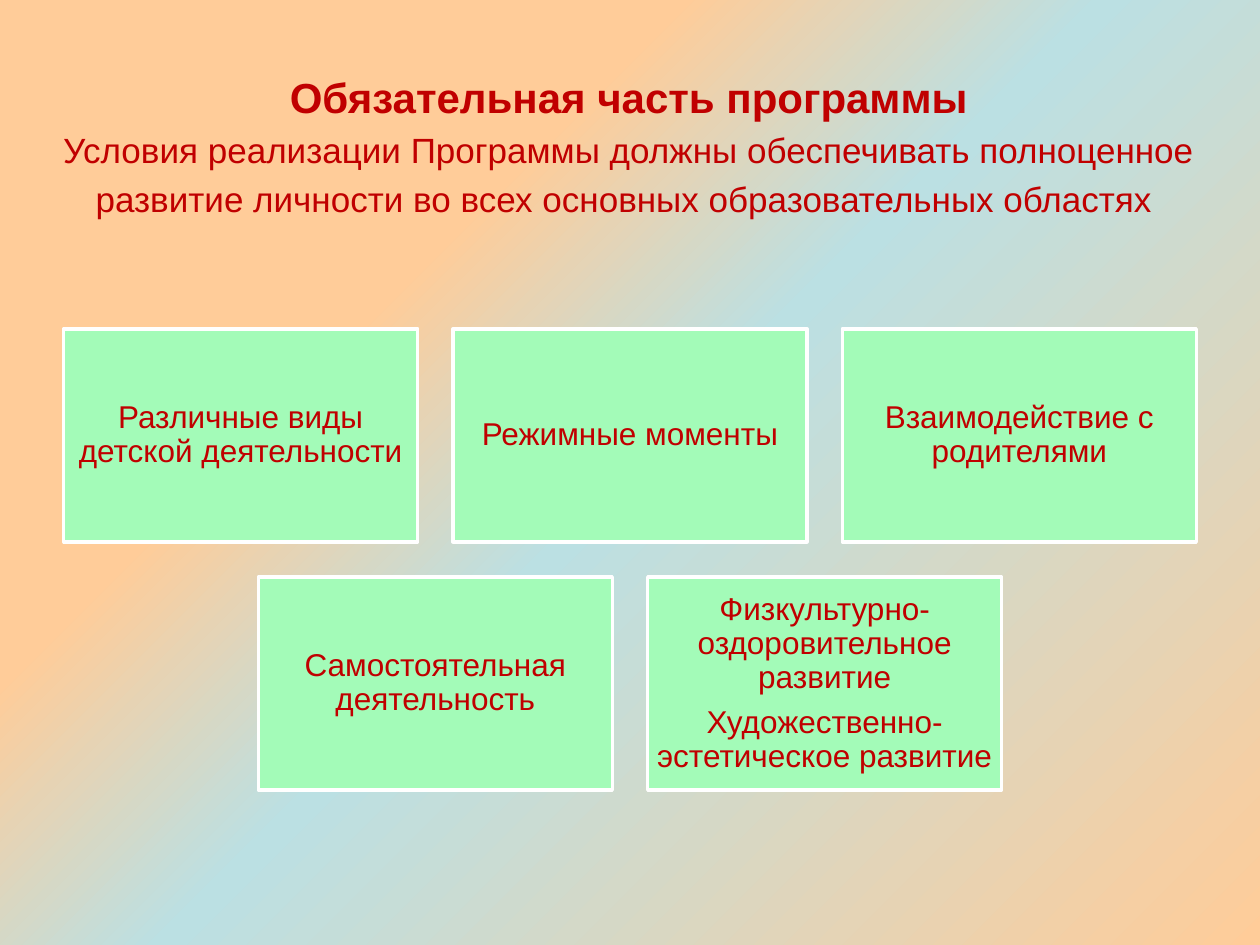
from copy import deepcopy
from dataclasses import dataclass

from pptx import Presentation
from pptx.dml.color import RGBColor
from pptx.enum import shapes, text
from pptx.util import Inches, Pt

COLORS = {"peach": "FFCC99", "sky": "BBE0E3", "mint": "A3FBB8",
          "white": "FFFFFF", "red": "C00000"}
SLIDE_W, SLIDE_H = 10, 7.5
CARD_W, CARD_H, GAP, GRID_TOP = 2.81, 1.69, 0.28, 2.61


@dataclass
class Card:
    paragraphs: list[str]


ROWS = [
    [Card(["Различные виды детской деятельности"]),
     Card(["Режимные моменты"]),
     Card(["Взаимодействие с родителями"])],
    [Card(["Самостоятельная деятельность"]),
     Card(["Физкультурно-оздоровительное развитие",
           "Художественно-эстетическое развитие"])],
]


def rgb(name: str) -> RGBColor:
    return RGBColor.from_string(COLORS[name])


def add_text(p, content: str, size: float, bold: bool = False,
             color: str = "red", spacing: float = 1.0, after: float = 0) -> None:
    p.alignment = text.PP_ALIGN.CENTER
    p.line_spacing = spacing
    p.space_after = Pt(after)
    r = p.add_run()
    r.text = content
    r.font.name = "Arial"
    r.font.size = Pt(size)
    r.font.bold = bold
    r.font.color.rgb = rgb(color)


def paint_background(s) -> None:
    """Diagonal gradient with three stops; the third is cloned in XML."""
    fill = s.background.fill
    fill.gradient()
    fill.gradient_angle = 315
    stop_list = s.element.xpath(".//p:bg//a:gsLst")[0]
    stop_list.append(deepcopy(stop_list[-1]))
    stops = [(0.31, "peach"), (0.5, "sky"), (1, "peach")]
    for stop, (position, color) in zip(fill.gradient_stops, stops):
        stop.position = position
        stop.color.rgb = rgb(color)


def draw_title(s) -> None:
    sp = s.shapes.add_textbox(Inches(0.28), Inches(0.29), Inches(9.42), Inches(1.67))
    tf = sp.text_frame
    tf.word_wrap = True
    tf.vertical_anchor = text.MSO_ANCHOR.MIDDLE
    p = tf.paragraphs[0]
    add_text(p, "Обязательная часть программы", 24, bold=True, spacing=1.15)
    p.add_line_break()
    add_text(p, "Условия реализации Программы должны обеспечивать полноценное "
                "развитие личности во всех основных образовательных областях ",
             20, spacing=1.15)


def draw_card(s, card: Card, left: float, top: float) -> None:
    sp = s.shapes.add_shape(shapes.MSO_SHAPE.RECTANGLE, Inches(left), Inches(top),
                            Inches(CARD_W), Inches(CARD_H))
    sp.shadow.inherit = False
    sp.fill.solid()
    sp.fill.fore_color.rgb = rgb("mint")
    sp.line.color.rgb = rgb("white")
    sp.line.width = Pt(2)
    tf = sp.text_frame
    tf.word_wrap = True
    tf.vertical_anchor = text.MSO_ANCHOR.MIDDLE
    tf.margin_left = tf.margin_right = tf.margin_top = tf.margin_bottom = Inches(0.07)
    for i, content in enumerate(card.paragraphs):
        p = tf.add_paragraph() if i else tf.paragraphs[0]
        add_text(p, content, 18, spacing=0.9, after=6.3)


def draw_cards(s) -> None:
    """Place each row of cards centred on the slide."""
    for i, row in enumerate(ROWS):
        row_w = len(row) * (CARD_W + GAP) - GAP
        for j, card in enumerate(row):
            draw_card(s, card, (SLIDE_W - row_w) / 2 + j * (CARD_W + GAP),
                      GRID_TOP + i * (CARD_H + GAP))


def main() -> None:
    prs = Presentation()
    prs.slide_width, prs.slide_height = Inches(SLIDE_W), Inches(SLIDE_H)
    s = prs.slides.add_slide(prs.slide_layouts[6])
    paint_background(s)
    draw_title(s)
    draw_cards(s)
    prs.save("out.pptx")


if __name__ == "__main__":
    main()
